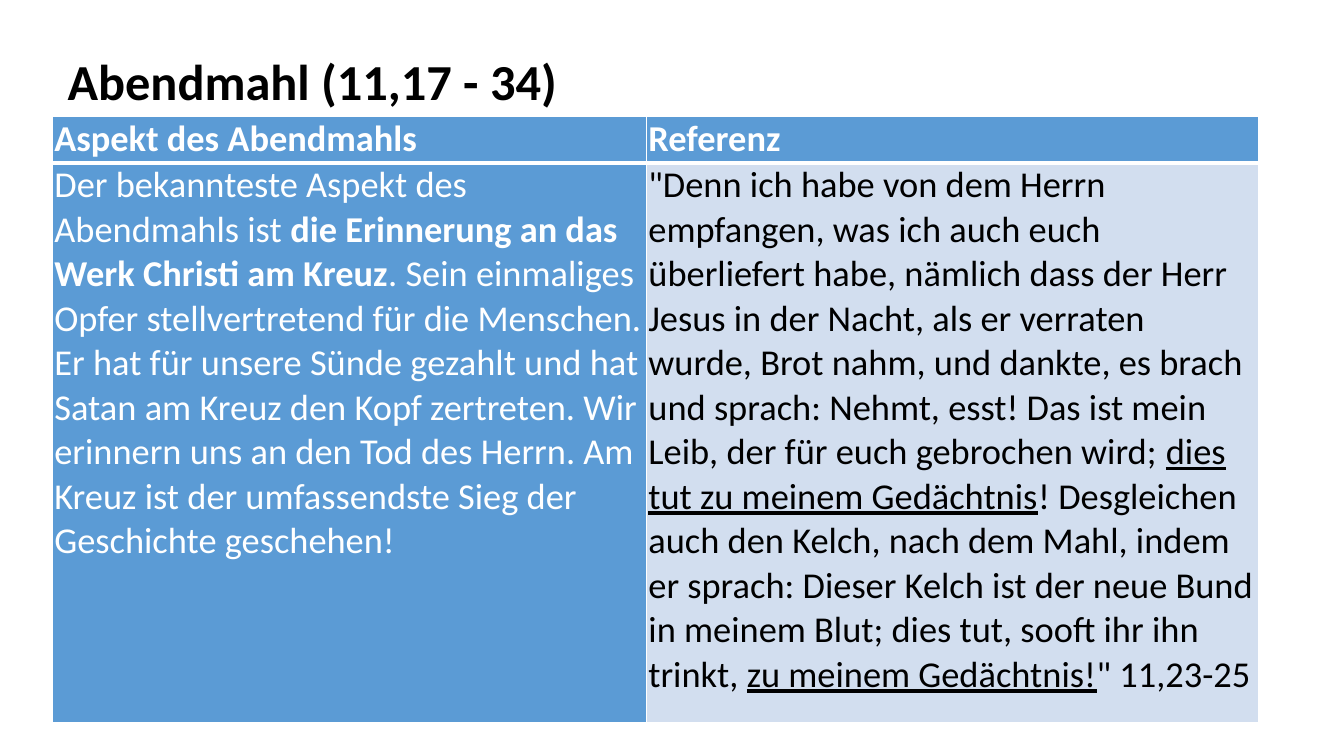
from lxml import etree
from pptx import Presentation
from pptx.dml.color import RGBColor
from pptx.enum.text import MSO_ANCHOR, MSO_AUTO_SIZE, PP_ALIGN
from pptx.oxml.ns import qn
from pptx.util import Inches, Pt

LEFT = PP_ALIGN.LEFT
TOP = MSO_ANCHOR.TOP
FIT_SHAPE = MSO_AUTO_SIZE.SHAPE_TO_FIT_TEXT

BLACK = RGBColor(0x00, 0x00, 0x00)
WHITE = RGBColor(0xFF, 0xFF, 0xFF)
BLUE = RGBColor(0x5B, 0x9B, 0xD5)
PALE_BLUE = RGBColor(0xD2, 0xDE, 0xEF)

PLAIN, BOLD, UNDERLINED = "plain", "bold", "underlined"

HEADINGS = ["Aspekt des Abendmahls", "Referenz"]
ASPECT = [
    ("Der bekannteste Aspekt des Abendmahls ist ", PLAIN),
    ("die Erinnerung an das Werk Christi am Kreuz", BOLD),
    (". Sein einmaliges Opfer stellvertretend für die Menschen. Er hat für "
     "unsere Sünde gezahlt und hat Satan am Kreuz den Kopf zertreten. Wir "
     "erinnern uns an den Tod des Herrn. Am Kreuz ist der umfassendste Sieg "
     "der Geschichte geschehen!", PLAIN),
]
REFERENCE = [
    ("\"Denn ich habe von dem Herrn empfangen, was ich auch euch überliefert "
     "habe, nämlich dass der Herr Jesus in der Nacht, als er verraten wurde, "
     "Brot nahm, und dankte, es brach und sprach: Nehmt, esst! Das ist mein "
     "Leib, der für euch gebrochen wird; ", PLAIN),
    ("dies tut zu meinem Gedächtnis", UNDERLINED),
    ("! Desgleichen auch den Kelch, nach dem Mahl, indem er sprach: Dieser "
     "Kelch ist der neue Bund in meinem Blut; dies tut, sooft ihr ihn trinkt, ",
     PLAIN),
    ("zu meinem Gedächtnis!", UNDERLINED),
    ("\" 11,23-25", PLAIN),
]


class SlideBuilder:
    """Holds the style and the current slide; lengths are percent of the slide."""

    font_name = "Calibri"
    title_size = Pt(36)
    table_size = Pt(26)
    cell_margin = Inches(0.02)
    thin, thick = Pt(1), Pt(3)

    def __init__(self, presentation):
        self.presentation = presentation
        title_only = presentation.slide_layouts[5]
        self.slide = presentation.slides.add_slide(title_only)

    def across(self, percent):
        return round(self.presentation.slide_width * percent / 100)

    def down(self, percent):
        return round(self.presentation.slide_height * percent / 100)

    def style(self, paragraph, size, color, bold=None):
        paragraph.alignment = LEFT
        font = paragraph.font
        font.name, font.size, font.bold = self.font_name, size, bold
        font.color.rgb = color

    def title(self, text, left, top, width, height):
        shape = self.slide.shapes.title
        shape.left, shape.top = self.across(left), self.down(top)
        shape.width, shape.height = self.across(width), self.down(height)
        frame = shape.text_frame
        frame.text = text
        frame.word_wrap = False
        frame.auto_size = FIT_SHAPE
        frame.vertical_anchor = TOP
        self.style(frame.paragraphs[0], self.title_size, BLACK, True)

    def table(self, left, top, widths, heights):
        frame = self.slide.shapes.add_table(
            len(heights), len(widths), self.across(left), self.down(top),
            self.across(sum(widths)), self.down(sum(heights)))
        table = frame.table
        for column, width in zip(table.columns, widths):
            column.width = self.across(width)
        for row, height in zip(table.rows, heights):
            row.height = self.down(height)
        return table

    def border(self, cell, side, width):
        properties = cell._tc.get_or_add_tcPr()
        line = etree.SubElement(properties, qn(f"a:ln{side}"), w=str(width))
        fill = etree.SubElement(line, qn("a:solidFill"))
        etree.SubElement(fill, qn("a:srgbClr"), val=str(WHITE))

    def cell(self, cell, runs, fill, color, bold=None, thick_side=None):
        for side in "LRTB":
            self.border(cell, side, self.thick if side == thick_side else self.thin)
        cell.fill.solid()
        cell.fill.fore_color.rgb = fill
        cell.margin_left = cell.margin_right = self.cell_margin
        cell.margin_top = cell.margin_bottom = 0
        cell.vertical_anchor = TOP
        paragraph = cell.text_frame.paragraphs[0]
        for text, emphasis in runs:
            run = paragraph.add_run()
            run.text = text
            if emphasis == BOLD:
                run.font.bold = True
            elif emphasis == UNDERLINED:
                run.font.underline = True
        self.style(paragraph, self.table_size, color, bold)


def main():
    presentation = Presentation()
    presentation.slide_width = Inches(13.33)
    presentation.slide_height = Inches(7.5)
    builder = SlideBuilder(presentation)

    # Title
    builder.title("Abendmahl (11,17 - 34)", left=4.28, top=6, width=38.33, height=9.47)

    # Table: heading row above one aspect and its reference
    table = builder.table(left=3.9, top=15.4, widths=[44.2, 45.55], heights=[6.13, 74])
    for column, heading in enumerate(HEADINGS):
        builder.cell(table.cell(0, column), [(heading, PLAIN)], BLUE, WHITE,
                     bold=True, thick_side="B")
    builder.cell(table.cell(1, 0), ASPECT, BLUE, WHITE, bold=False, thick_side="T")
    builder.cell(table.cell(1, 1), REFERENCE, PALE_BLUE, BLACK, bold=False, thick_side="T")

    presentation.save("out.pptx")


if __name__ == "__main__":
    main()
